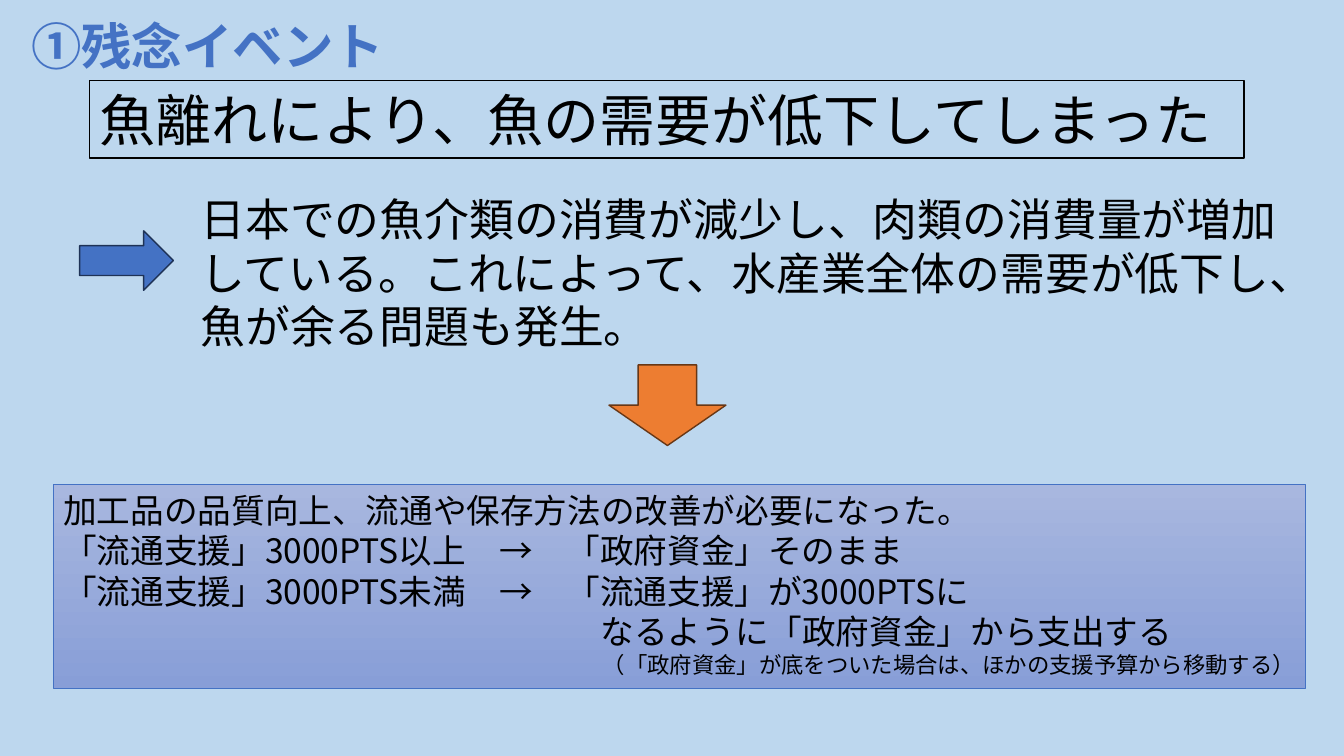
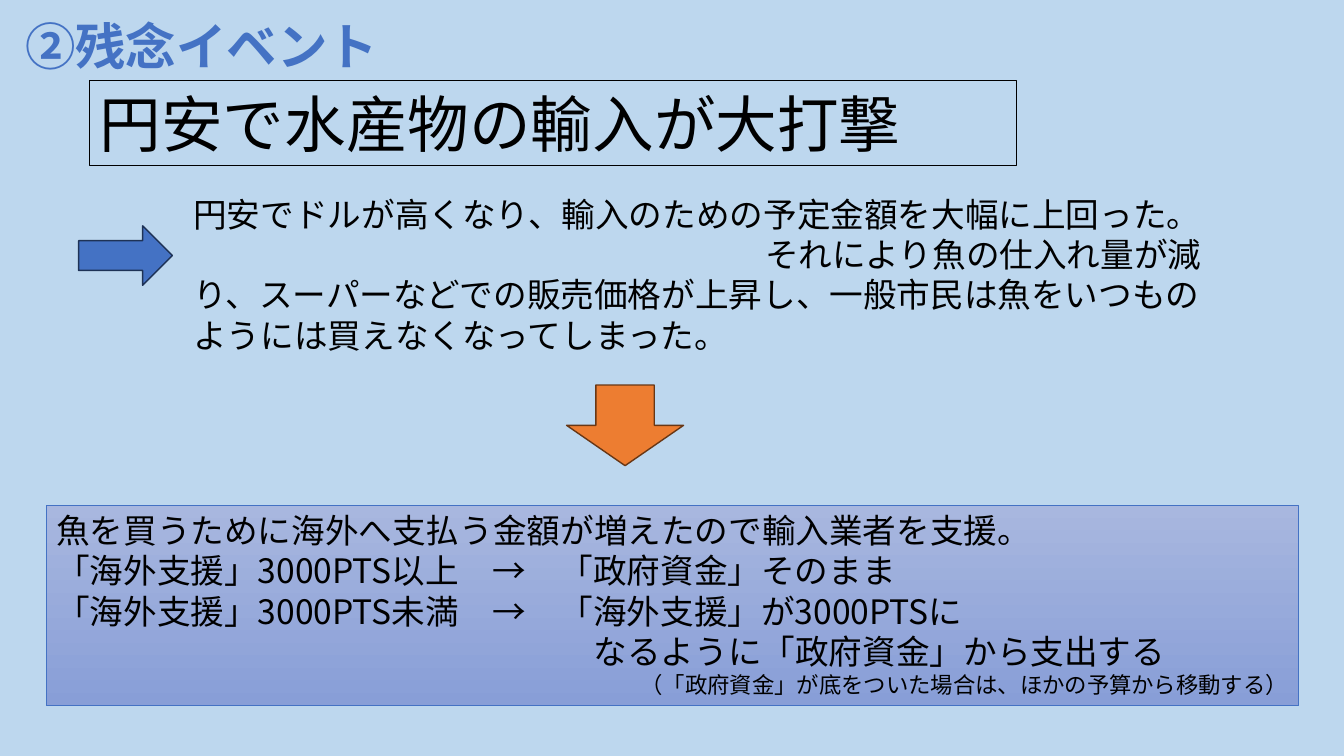
import pptx
import pptx.util
import pptx.dml.color
import pptx.enum.shapes
import pptx.enum.text

Inches = pptx.util.Inches
Pt = pptx.util.Pt
RGBColor = pptx.dml.color.RGBColor
SHAPE = pptx.enum.shapes.MSO_SHAPE
ALIGN = pptx.enum.text.PP_ALIGN

FONT = "Noto Sans CJK JP"
SKY = RGBColor(0xBD, 0xD7, 0xEE)
BLACK = RGBColor(0, 0, 0)
BLUE = RGBColor(0x44, 0x72, 0xC4)
NAVY = RGBColor(0x1E, 0x32, 0x56)
ORANGE = RGBColor(0xED, 0x7D, 0x31)
BROWN = RGBColor(0x68, 0x37, 0x15)
PALE = RGBColor(0xA8, 0xB7, 0xDF)
DEEP = RGBColor(0x88, 0x9E, 0xD7)
LEADING = 1.2


def write(para, text, size=24, color=BLACK, bold=False, align=ALIGN.LEFT, left=0, first=0):
    para.alignment = align
    para.line_spacing = Pt(size * LEADING)
    props = para._p.get_or_add_pPr()
    props.set("marL", str(Inches(left)))
    props.set("indent", str(Inches(first)))
    run = para.add_run()
    run.text = text
    font = run.font
    font.name = FONT
    font.size = Pt(size)
    font.bold = bold
    font.color.rgb = color
    east = run._r.get_or_add_rPr().makeelement(pptx.oxml.ns.qn("a:ea"), {"typeface": FONT})
    run._r.rPr.find(pptx.oxml.ns.qn("a:latin")).addnext(east)


def add_box(slide, area, lines):
    box = slide.shapes.add_textbox(*map(Inches, area))
    frame = box.text_frame
    frame.word_wrap = True
    for index, (text, style) in enumerate(lines):
        para = frame.add_paragraph() if index else frame.paragraphs[0]
        write(para, text, **style)
    return box


def outline(shape, color, width):
    shape.line.color.rgb = color
    shape.line.width = Pt(width)


def add_title(slide, left, text):
    add_box(slide, (left, 0.1, 7.39, 0.71), [(text, dict(size=36, color=BLUE, bold=True))])


def add_head(slide, width, height, text, size):
    box = add_box(slide, (0.89, 0.8, width, height), [(text, dict(size=size))])
    outline(box, BLACK, 1)


def add_arrow(slide, kind, area, fill, edge):
    arrow = slide.shapes.add_shape(kind, *map(Inches, area))
    arrow.shadow.inherit = False
    arrow.fill.solid()
    arrow.fill.fore_color.rgb = fill
    outline(arrow, edge, 1)


def add_panel(slide, left, top, height, need, aid, source):
    lines = [
        (need, {}),
        (f"「{aid}」3000PTS以上　→　「政府資金」そのまま", {}),
        (f"「{aid}」3000PTS未満　→　「{aid}」が3000PTSに", {}),
        ("なるように「政府資金」から支出する", dict(left=5.33)),
        (f"（「政府資金」が底をついた場合は、ほかの{source}から移動する）",
         dict(size=16, align=ALIGN.RIGHT)),
    ]
    panel = add_box(slide, (left, top, 12.42, height), lines)
    panel.fill.gradient()
    panel.fill.gradient_angle = 270
    for stop, color in zip(panel.fill.gradient_stops, (PALE, DEEP)):
        stop.color.rgb = color
    outline(panel, BLUE, 0.5)


def add_event(deck, title, head, body, side, down, panel):
    slide = deck.slides.add_slide(deck.slide_layouts[6])
    slide.background.fill.solid()
    slide.background.fill.fore_color.rgb = SKY
    add_title(slide, *title)
    add_head(slide, *head)
    add_box(slide, *body)
    add_arrow(slide, SHAPE.RIGHT_ARROW, (*side, 0.93, 0.59), BLUE, NAVY)
    add_arrow(slide, SHAPE.DOWN_ARROW, (*down, 1.16, 0.8), ORANGE, BROWN)
    add_panel(slide, *panel)


def main():
    deck = pptx.Presentation()
    deck.slide_width = Inches(13.33)
    deck.slide_height = Inches(7.5)
    add_event(
        deck,
        title=(0.21, "①残念イベント"),
        head=(11.45, 0.77, "魚離れにより、魚の需要が低下してしまった", 40),
        body=((1.89, 1.85, 11.06, 2.05), [
            ("日本での魚介類の消費が減少し、肉類の消費量が増加している。"
             "これによって、水産業全体の需要が低下し、魚が余る問題も発生。", dict(size=32)),
        ]),
        side=(0.79, 2.29),
        down=(6.04, 3.62),
        panel=(0.53, 4.81, 2.02, "加工品の品質向上、流通や保存方法の改善が必要になった。",
               "流通支援", "支援予算"),
    )
    add_event(
        deck,
        title=(0.15, "②残念イベント"),
        head=(9.19, 0.84, "円安で水産物の輸入が大打撃", 44),
        body=((1.82, 1.87, 10.27, 1.72), [
            ("円安でドルが高くなり、輸入のための予定金額を大幅に上回った。", {}),
            ("それにより魚の仕入れ量が減り、スーパーなどでの販売価格が上昇し、"
             "一般市民は魚をいつものようには買えなくなってしまった。", dict(first=5.67)),
        ]),
        side=(0.78, 2.24),
        down=(5.62, 3.82),
        panel=(0.46, 5.01, 1.99, "魚を買うために海外へ支払う金額が増えたので輸入業者を支援。",
               "海外支援", "予算"),
    )
    deck.save("out.pptx")


if __name__ == "__main__":
    main()
